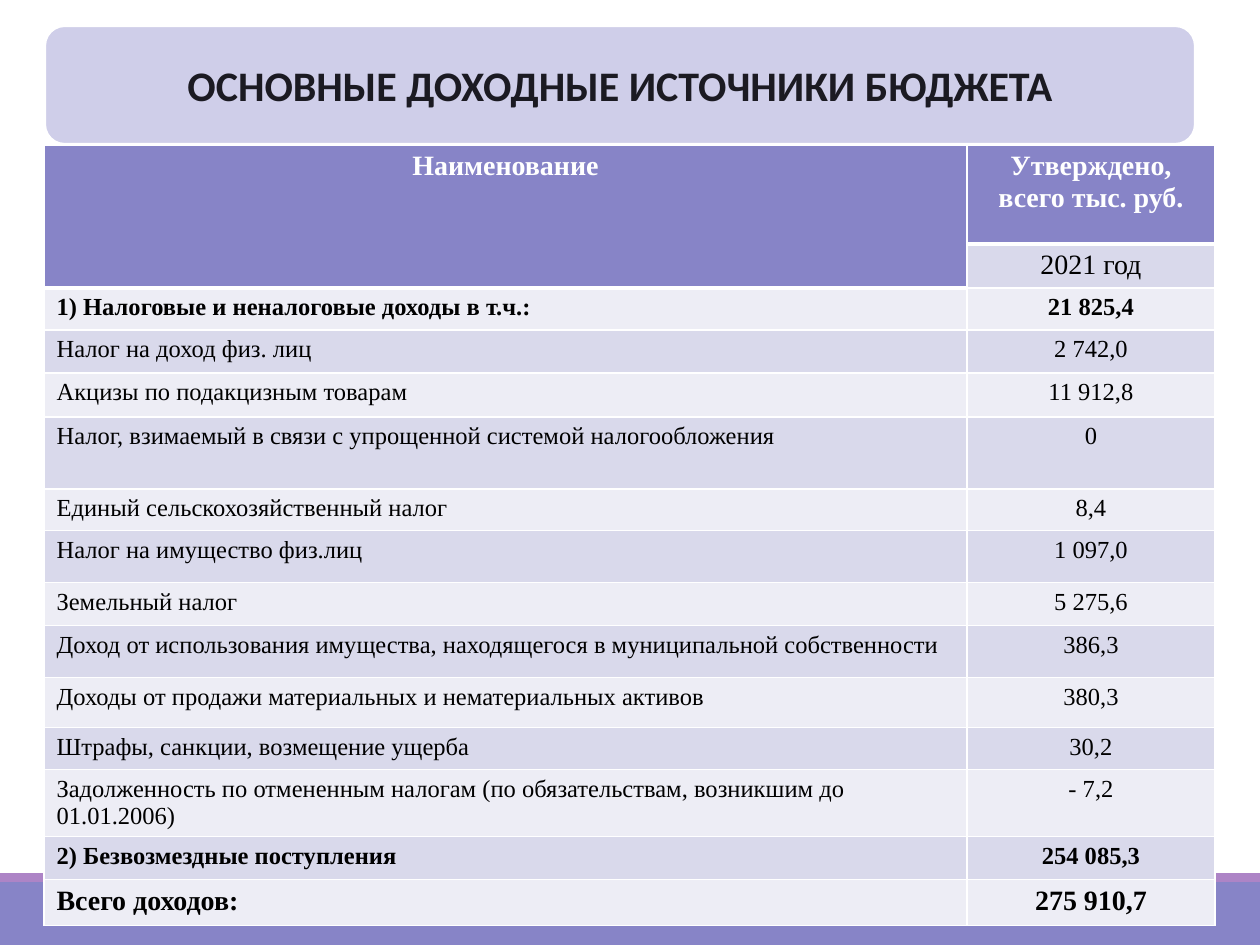
import pptx
import pptx.dml.color
import pptx.enum.shapes
import pptx.enum.text
import pptx.oxml
import pptx.oxml.ns
import pptx.util

EMU_PER_PX = 914400 / 126
COLORS = {
    "white": "FFFFFF", "black": "000000", "title": "1B1A22", "panel": "CFCEE9",
    "header": "8784C7", "accent": "AD84C6", "dark_band": "D9D9EB", "light_band": "EDEDF5",
}
ALIGN = pptx.enum.text.PP_ALIGN
SHAPES = pptx.enum.shapes.MSO_SHAPE
COLUMN_WIDTHS = [923, 248]
ROWS = [
    (99, "Наименование", "Утверждено, всего тыс. руб."),
    (44, "", "2021 год"),
    (42, "1) Налоговые и неналоговые доходы в т.ч.:", "21 825,4"),
    (43, "Налог на доход физ. лиц", "2 742,0"),
    (44, "Акцизы по подакцизным товарам", "11 912,8"),
    (72, "Налог, взимаемый в связи с упрощенной системой налогообложения", "0"),
    (42, "Единый сельскохозяйственный налог", "8,4"),
    (52, "Налог на имущество физ.лиц", "1 097,0"),
    (43, "Земельный налог", "5 275,6"),
    (52, "Доход от использования имущества, находящегося в муниципальной собственности", "386,3"),
    (50, "Доходы от продажи материальных и нематериальных активов", "380,3"),
    (42, "Штрафы, санкции, возмещение ущерба", "30,2"),
    (67, "Задолженность по отмененным налогам (по обязательствам, возникшим до 01.01.2006)", "- 7,2"),
    (43, "2) Безвозмездные поступления", "254 085,3"),
    (46, "Всего доходов:", "275 910,7"),
]
LAST = len(ROWS) - 1
BOLD_ROWS = {0, 2, LAST - 1, LAST}
LARGE_ROWS = {0, 1, LAST}
THICK_EDGES = {(0, 0, "B"), (1, 0, "B"), (0, 1, "B"), (1, 1, "T"), (2, 0, "T")}


def px(n):
    return pptx.util.Emu(round(n * EMU_PER_PX))


def rgb(name):
    return pptx.dml.color.RGBColor.from_string(COLORS[name])


def set_text(tf, text, size=14, font="Times New Roman", color="black", bold=False, align=ALIGN.LEFT):
    p = tf.paragraphs[0]
    p.alignment = align
    r = p.add_run()
    r.text = text
    r.font.size = pptx.util.Pt(size)
    r.font.name = font
    r.font.bold = bold
    r.font.color.rgb = rgb(color)


def add_box(s, kind, box, fill, line=None):
    sp = s.shapes.add_shape(kind, *map(px, box))
    sp.shadow.inherit = False
    sp.fill.solid()
    sp.fill.fore_color.rgb = rgb(fill)
    if line:
        sp.line.color.rgb = rgb(line)
        sp.line.width = pptx.util.Pt(1.25)
    else:
        sp.line.fill.background()
    return sp


def set_borders(cell, row, col):
    tc_pr = cell._tc.get_or_add_tcPr()
    for side in "LRTB":
        width = pptx.util.Pt(3 if (row, col, side) in THICK_EDGES else 1)
        tc_pr.append(pptx.oxml.parse_xml(
            f'<a:ln{side} {pptx.oxml.ns.nsdecls("a")} w="{width}"><a:solidFill>'
            f'<a:srgbClr val="{COLORS["white"]}"/></a:solidFill></a:ln{side}>'))


def format_cell(cell, row, col, text):
    is_header = row == 0 or (row, col) == (1, 0)
    set_borders(cell, row, col)
    cell.fill.solid()
    cell.fill.fore_color.rgb = rgb("header" if is_header else "dark_band" if row % 2 else "light_band")
    cell.margin_top, cell.margin_bottom = px(6), px(4)
    if text:
        set_text(cell.text_frame, text, size=16 if row in LARGE_ROWS else 14,
                 color="white" if is_header else "black", bold=row in BOLD_ROWS,
                 align=ALIGN.CENTER if col or is_header else ALIGN.LEFT)


def add_income_table(s):
    heights = [row[0] for row in ROWS]
    table = s.shapes.add_table(len(ROWS), 2, px(44), px(145),
                               px(sum(COLUMN_WIDTHS)), px(sum(heights))).table
    for column, width in zip(table.columns, COLUMN_WIDTHS):
        column.width = px(width)
    for i, (height, *texts) in enumerate(ROWS):
        table.rows[i].height = px(height)
        for j, text in enumerate(texts):
            format_cell(table.cell(i, j), i, j, text)
    table.cell(0, 0).merge(table.cell(1, 0))


def add_title(s):
    sp = add_box(s, SHAPES.ROUNDED_RECTANGLE, (45, 26, 1150, 118), "panel", line="white")
    sp.text_frame.word_wrap = True
    sp.text_frame.vertical_anchor = pptx.enum.text.MSO_ANCHOR.MIDDLE
    set_text(sp.text_frame, "ОСНОВНЫЕ ДОХОДНЫЕ ИСТОЧНИКИ БЮДЖЕТА", size=24, font="Calibri",
             color="title", bold=True, align=ALIGN.CENTER)


def main():
    """Build the slide of the main budget income sources."""
    prs = pptx.Presentation()
    prs.slide_width, prs.slide_height = px(1260), px(945)
    s = prs.slides.add_slide(prs.slide_layouts[6])
    add_box(s, SHAPES.RECTANGLE, (0, 882, 1260, 63), "header")
    add_box(s, SHAPES.RECTANGLE, (0, 873, 1260, 9), "accent")
    add_title(s)
    add_income_table(s)
    prs.save("out.pptx")


if __name__ == "__main__":
    main()
